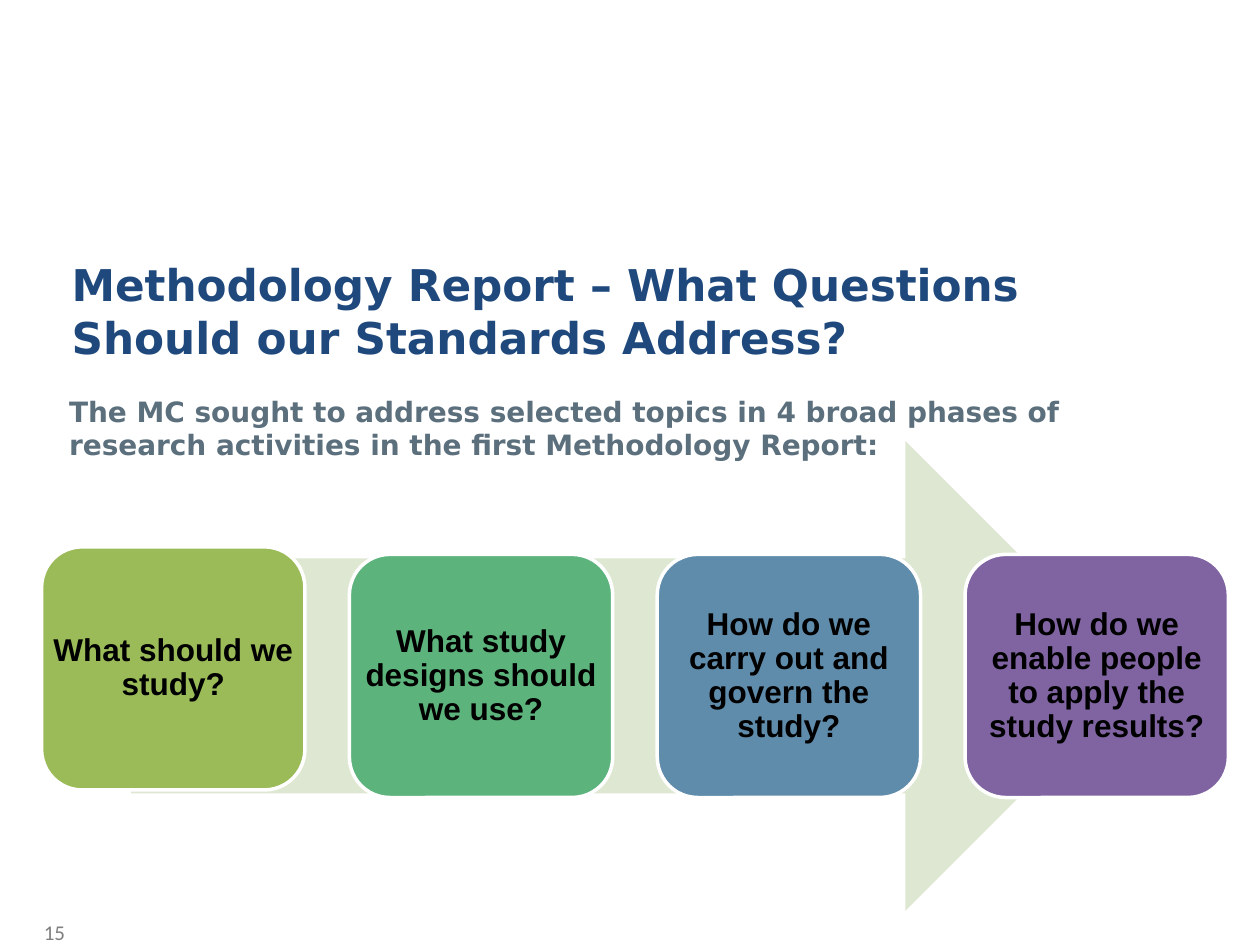
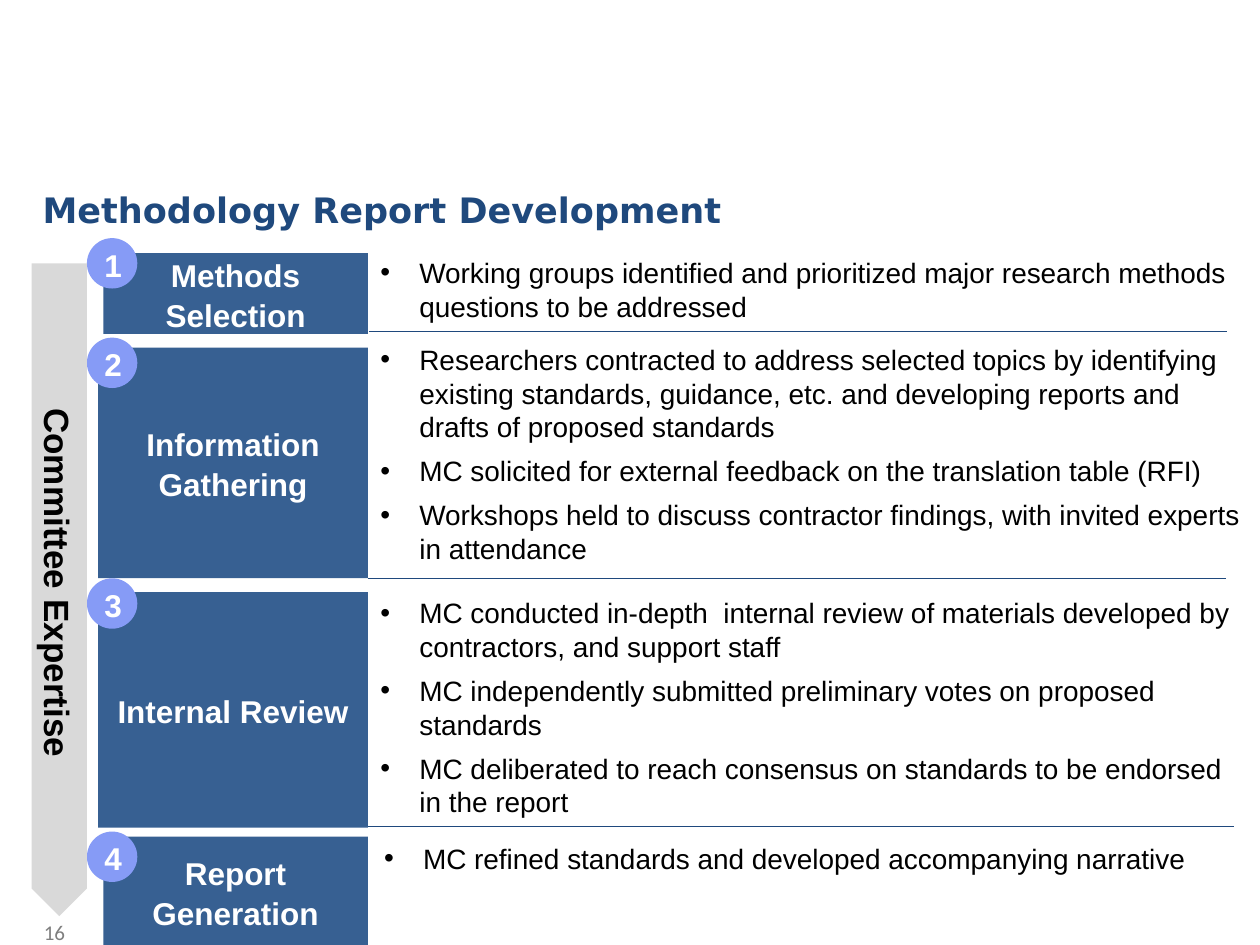
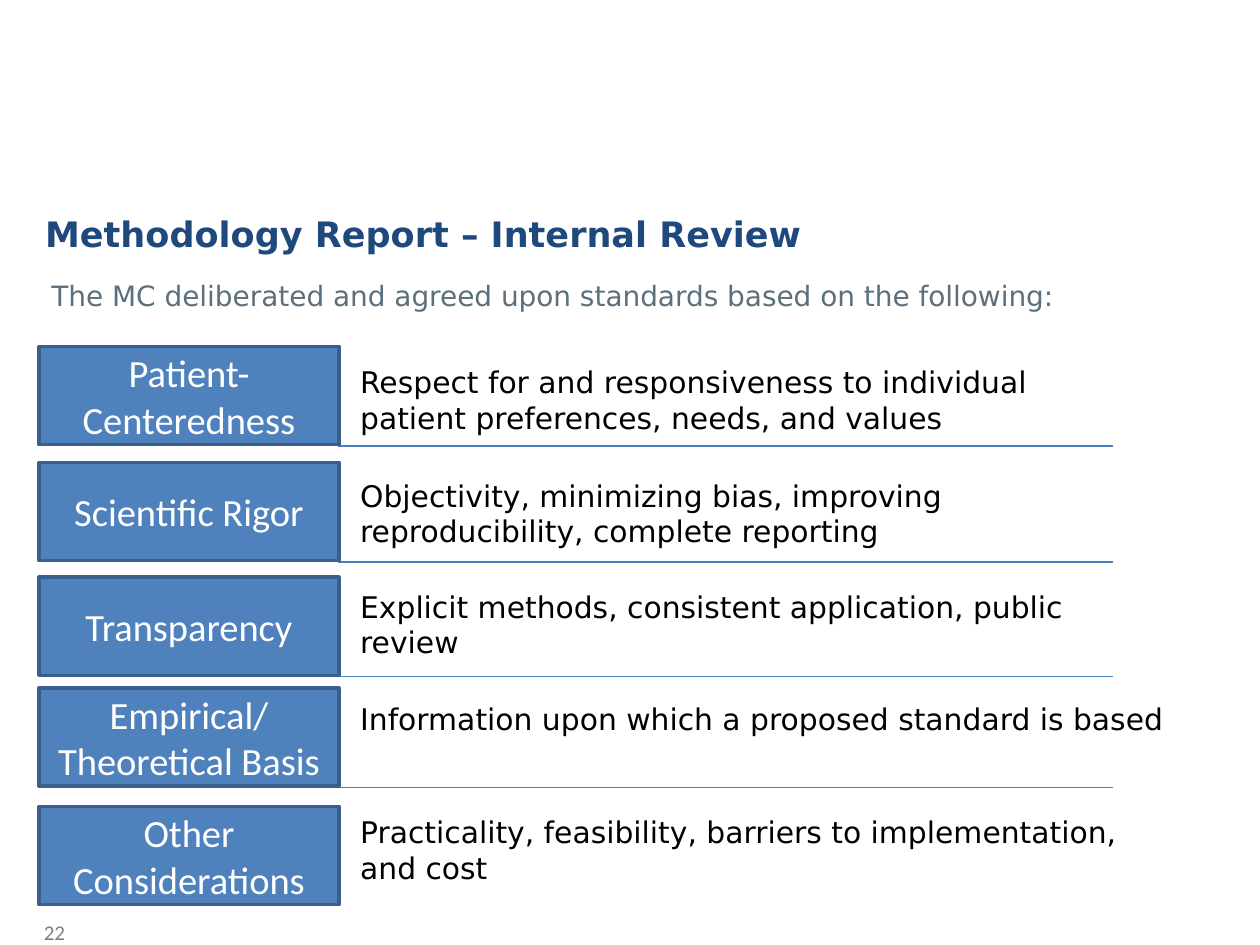
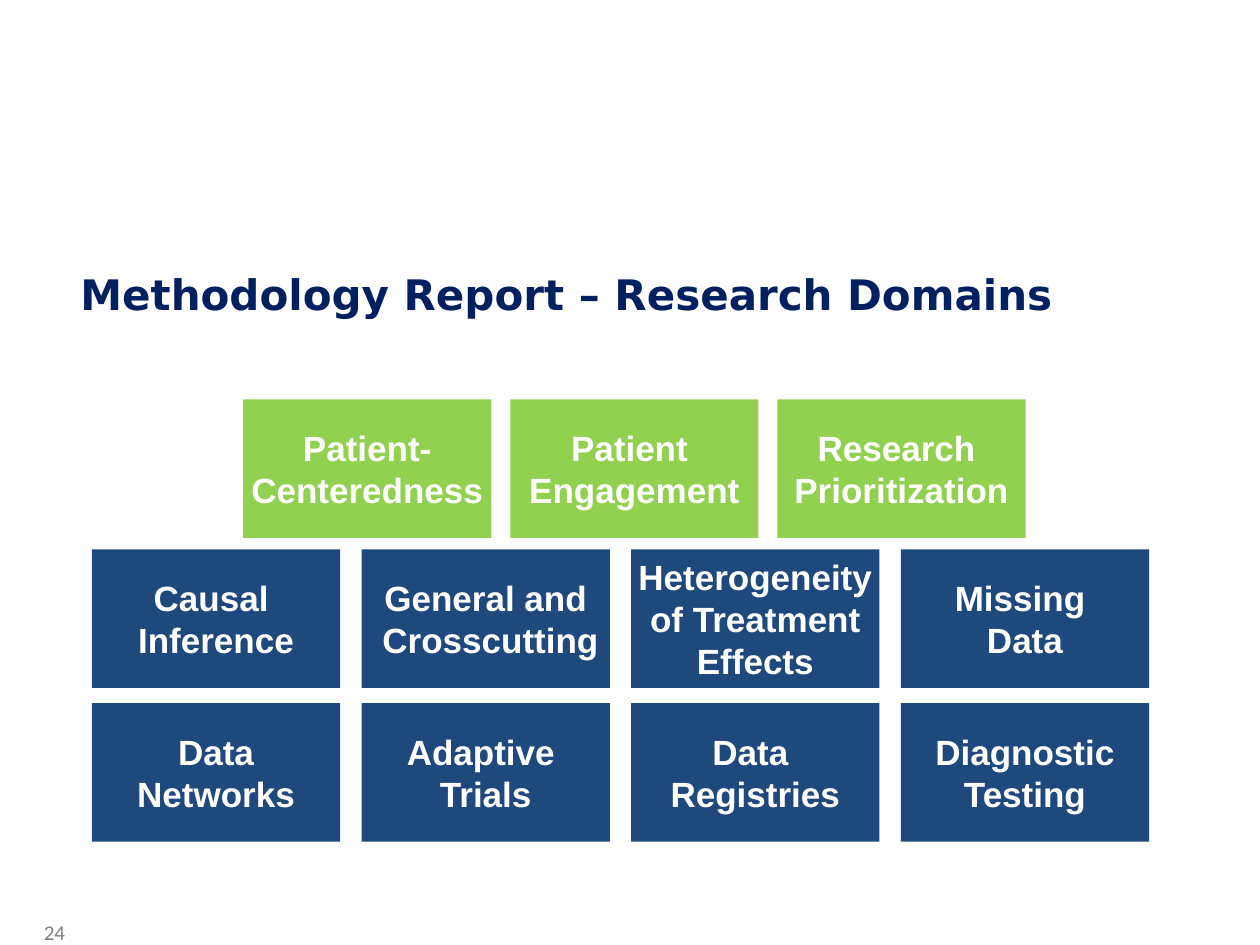
from lxml import etree
from pptx import Presentation
from pptx.dml.color import RGBColor
from pptx.enum.shapes import MSO_CONNECTOR, MSO_SHAPE
from pptx.enum.text import MSO_ANCHOR, MSO_AUTO_SIZE, PP_ALIGN
from pptx.oxml.ns import qn
from pptx.util import Inches, Pt

# Shared look
COLORS = {
    "navy": "1F497D", "deep": "002060", "slate": "5B6F7C", "grey": "7F7F7F",
    "black": "000000", "white": "FFFFFF", "pale_green": "DEE7D1",
    "olive": "9BBB59", "green": "5CB37C", "blue": "608CAB", "purple": "8064A2",
    "step": "376092", "badge": "869BF6", "silver": "D9D9D9",
    "box": "4F81BD", "box_edge": "3A5F8C", "rule": "4B7EBC", "lime": "92D050",
}
HEADING, BODY, PLAIN = "DejaVu Sans", "Arial", "Calibri"

# Slide content
# question, colour, top
PHASES = [
    ("What should we study?", "olive", 4.34),
    ("What study designs should we use?", "green", 4.4),
    ("How do we carry out and govern the study?", "blue", 4.4),
    ("How do we enable people to apply the study results?", "purple", 4.4),
]

# name, box (left, top, width, height), badge top, text (left, top, width, height), points
STEPS = [
    ("Methods Selection", (0.82, 2.01, 2.1, 0.64), 1.89, (2.92, 1.98, 7.19, 0.64), [
        "Working groups identified and prioritized major research methods questions to be addressed",
    ]),
    ("Information Gathering", (0.78, 2.76, 2.14, 1.83), 2.68, (2.92, 2.67, 7.08, 1.88), [
        "Researchers contracted to address selected topics by identifying existing standards, "
        "guidance, etc. and developing reports and drafts of proposed standards",
        "MC solicited for external feedback on the translation table (RFI)",
        "Workshops held to discuss contractor findings, with invited experts in attendance",
    ]),
    ("Internal Review", (0.78, 4.7, 2.14, 1.87), 4.59, (2.92, 4.68, 7.08, 1.88), [
        "MC conducted in-depth  internal review of materials developed by contractors, "
        "and support staff",
        "MC independently submitted preliminary votes on proposed standards",
        "MC deliberated to reach consensus on standards to be endorsed in the report",
    ]),
    ("Report Generation", (0.82, 6.64, 2.1, 0.88), 6.6, (2.95, 6.63, 6.84, 0.37), [
        "MC refined standards and developed accompanying narrative",
    ]),
]
# left, right, height of each rule between steps
STEP_RULES = [(2.93, 9.74, 2.63), (2.92, 9.73, 4.59), (2.64, 9.79, 6.56)]

# name, box top, description, description top, description width
CRITERIA = [
    ("Patient-Centeredness", 2.75,
     "Respect for and responsiveness to individual patient preferences, needs, and values",
     2.84, 6.32),
    ("Scientific Rigor", 3.67,
     "Objectivity, minimizing bias, improving reproducibility, complete reporting", 3.74, 6.61),
    ("Transparency", 4.58,
     "Explicit methods, consistent application, public review", 4.62, 6.61),
    ("Empirical/ Theoretical Basis", 5.46,
     "Information upon which a proposed standard is based", 5.51, 6.61),
    ("Other Considerations", 6.4,
     "Practicality, feasibility, barriers to implementation, and cost", 6.41, 6.61),
]

# top, first left, pitch, colour, domains as lists of lines
DOMAIN_ROWS = [
    (3.17, 1.93, 2.12, "lime", [
        ["Patient-", "Centeredness"], ["Patient ", "Engagement"],
        ["Research ", "Prioritization"]]),
    (4.36, 0.73, 2.14, "navy", [
        ["Causal ", "Inference"], ["General and", " Crosscutting"],
        ["Heterogeneity", "of Treatment", "Effects"], ["Missing ", "Data"]]),
    (5.58, 0.73, 2.14, "navy", [
        ["Data", "Networks"], ["Adaptive ", "Trials"],
        ["Data ", "Registries"], ["Diagnostic", "Testing"]]),
]


def color(name):
    return RGBColor.from_string(COLORS[name])


def add_bullet(paragraph):
    properties = paragraph._p.get_or_add_pPr()
    properties.set("marL", str(Inches(0.31)))
    properties.set("indent", str(Inches(-0.31)))
    etree.SubElement(properties, qn("a:buFont")).set("typeface", BODY)
    etree.SubElement(properties, qn("a:buChar")).set("char", "•")


def write(shape, lines, size, font, ink, bold=False, align=PP_ALIGN.LEFT,
          anchor=MSO_ANCHOR.TOP, inset=None, wrap=True, grow=False,
          spacing=None, after=None, bullets=False):
    frame = shape.text_frame
    frame.word_wrap = wrap
    frame.vertical_anchor = anchor
    frame.auto_size = MSO_AUTO_SIZE.SHAPE_TO_FIT_TEXT if grow else MSO_AUTO_SIZE.NONE
    if inset is not None:
        frame.margin_left = frame.margin_right = Inches(inset)
        frame.margin_top = frame.margin_bottom = Inches(inset)
    frame.text = "\n".join(lines)
    for paragraph in frame.paragraphs:
        if bullets:
            add_bullet(paragraph)
        paragraph.alignment = align
        if spacing:
            paragraph.line_spacing = spacing
        if after:
            paragraph.space_after = Pt(after)
        for run in paragraph.runs:
            run.font.size = Pt(size)
            run.font.name = font
            run.font.bold = bold
            run.font.color.rgb = color(ink)


def add_text(slide, place, lines, size, font, ink, **style):
    box = slide.shapes.add_textbox(*map(Inches, place))
    write(box, lines, size, font, ink, **style)


def add_block(slide, kind, place, fill, edge=None, edge_width=2):
    shape = slide.shapes.add_shape(kind, *map(Inches, place))
    shape.shadow.inherit = False
    shape.fill.solid()
    shape.fill.fore_color.rgb = color(fill)
    if edge:
        shape.line.color.rgb = color(edge)
        shape.line.width = Pt(edge_width)
    else:
        shape.line.fill.background()
    return shape


def add_rule(slide, left, right, top, ink):
    line = slide.shapes.add_connector(
        MSO_CONNECTOR.STRAIGHT, Inches(left), Inches(top), Inches(right), Inches(top))
    line.line.color.rgb = color(ink)
    line.line.width = Pt(0.75)
    etree.SubElement(line._element.spPr, qn("a:effectLst"))


def start_slide(presentation, number, title, place, size, ink="navy"):
    slide = presentation.slides.add_slide(presentation.slide_layouts[6])
    add_text(slide, place, [title], size, HEADING, ink, bold=True)
    add_text(slide, (0.25, 7.25, 0.67, 0.3), [str(number)], 12, PLAIN, "grey", grow=True)
    return slide


CENTERED = {"align": PP_ALIGN.CENTER, "anchor": MSO_ANCHOR.MIDDLE}
STEP_STYLE = {**CENTERED, "bold": True, "inset": 0.08, "spacing": 1.06}


def build_questions(presentation):
    slide = start_slide(
        presentation, 15, "Methodology Report – What Questions Should our Standards Address?",
        (0.47, 2, 8.41, 0.7), 25)
    add_text(slide, (0.45, 3.08, 9.09, 0.64), [
        "The MC sought to address selected topics in 4 broad phases of research activities "
        "in the first Methodology Report:"], 16, HEADING, "slate", bold=True, grow=True)
    add_block(slide, MSO_SHAPE.RIGHT_ARROW, (1.04, 3.5, 8.01, 3.73), "pale_green")
    for index, (question, fill, top) in enumerate(PHASES):
        place = (0.33 + 2.443 * index, top, 2.09, 1.93)
        add_block(slide, MSO_SHAPE.ROUNDED_RECTANGLE, place, fill, "white")
        # The label spans the full card, wider than a rounded shape's own text area
        add_text(slide, place, [question], 18, BODY, "black",
                 bold=True, inset=0.07, spacing=0.9, **CENTERED)


def build_development(presentation):
    slide = start_slide(presentation, 16, "Methodology Report Development",
                        (0.24, 1.45, 8.83, 0.7), 20)
    for left, right, top in STEP_RULES:
        add_rule(slide, left, right, top, "navy")
    for number, (name, box, badge_top, text, points) in enumerate(STEPS, 1):
        add_text(slide, text, points, 16, BODY, "black", grow=True, after=6, bullets=True)
        step = add_block(slide, MSO_SHAPE.RECTANGLE, box, "step")
        write(step, [name], 18, BODY, "white", **STEP_STYLE)
        badge = add_block(slide, MSO_SHAPE.OVAL, (0.69, badge_top, 0.4, 0.4), "badge")
        write(badge, [str(number)], 18, BODY, "white", **STEP_STYLE)
    # Downward band along the left edge
    band = add_block(slide, MSO_SHAPE.PENTAGON, (-2.12, 4.46, 5.18, 0.44), "silver")
    band.rotation = 90
    write(band, ["Committee Expertise"], 20, BODY, "black", **STEP_STYLE)


def build_review(presentation):
    slide = start_slide(presentation, 22, "Methodology Report – Internal Review",
                        (0.26, 1.64, 8.41, 0.7), 20)
    add_text(slide, (0.31, 2.16, 8.89, 0.84), [
        "The MC deliberated and agreed upon standards based on the following:"],
        16, HEADING, "slate", grow=True, after=12)
    for name, top, description, text_top, text_width in CRITERIA:
        if name != CRITERIA[-1][0]:
            add_rule(slide, 2.68, 8.83, top + 0.79, "rule")
        box = add_block(slide, MSO_SHAPE.RECTANGLE, (0.31, top, 2.38, 0.78), "box", "box_edge")
        write(box, [name], 22, PLAIN, "white", **CENTERED)
        add_text(slide, (2.76, text_top, text_width, 0.67), [description],
                 17, HEADING, "black", grow=True, after=6)


def build_domains(presentation):
    slide = start_slide(presentation, 24, "Methodology Report – Research Domains",
                        (0.54, 2.08, 8.41, 0.7), 24, "deep")
    for top, first_left, pitch, fill, domains in DOMAIN_ROWS:
        for column, lines in enumerate(domains):
            tile = add_block(slide, MSO_SHAPE.RECTANGLE,
                             (first_left + pitch * column, top, 1.97, 1.1), fill)
            write(tile, lines, 20, BODY, "white", bold=True, inset=0, wrap=False, **CENTERED)


def main():
    presentation = Presentation()
    presentation.slide_width = Inches(10)
    presentation.slide_height = Inches(7.5)
    build_questions(presentation)
    build_development(presentation)
    build_review(presentation)
    build_domains(presentation)
    presentation.save("out.pptx")


if __name__ == "__main__":
    main()
